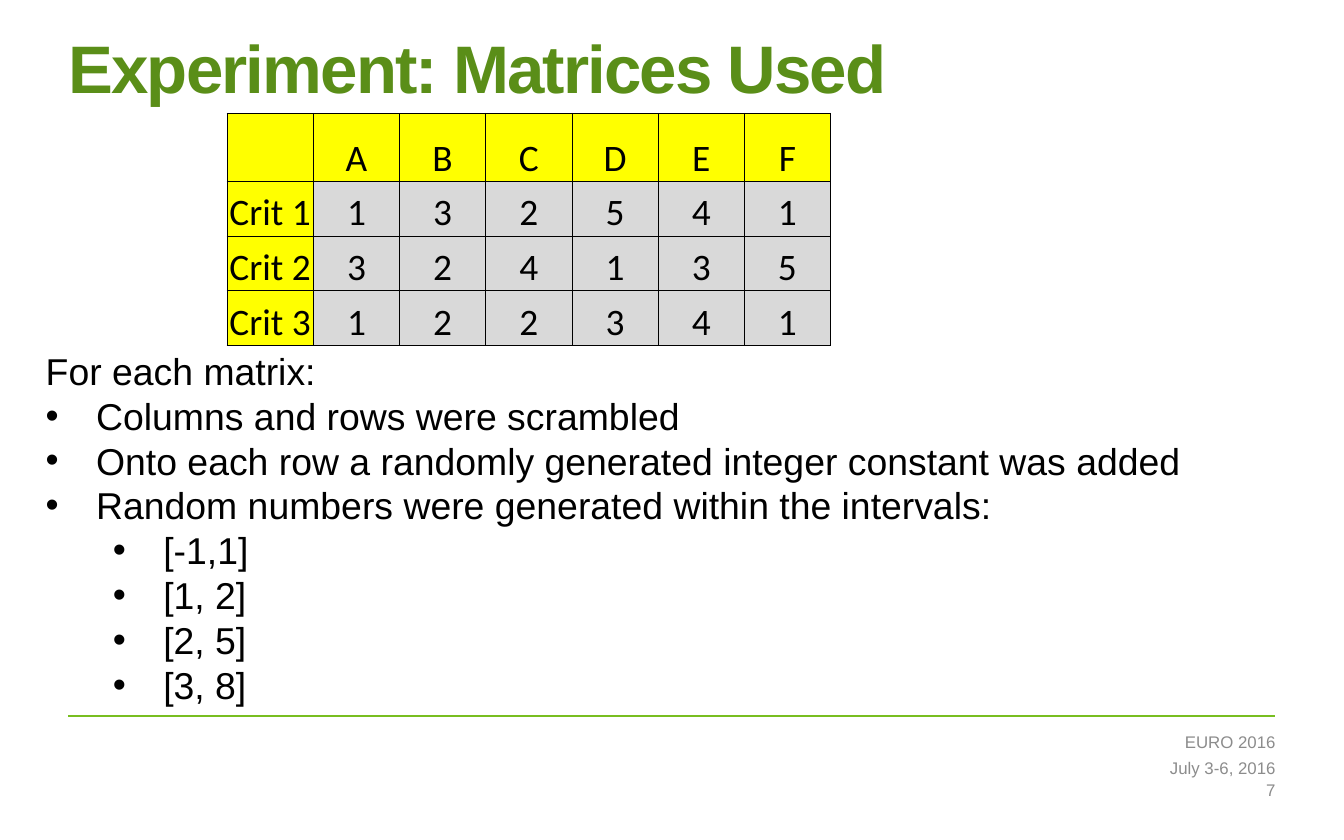
import lxml.etree
import pptx
import pptx.dml.color
import pptx.enum.shapes
import pptx.enum.text
import pptx.oxml
import pptx.oxml.ns
import pptx.util

Pt = pptx.util.Pt
ANCHOR = pptx.enum.text.MSO_ANCHOR
ALIGN = pptx.enum.text.PP_ALIGN
qn = pptx.oxml.ns.qn

MATRIX = [
    ["", "A", "B", "C", "D", "E", "F"],
    ["Crit 1", "1", "3", "2", "5", "4", "1"],
    ["Crit 2", "3", "2", "4", "1", "3", "5"],
    ["Crit 3", "1", "2", "2", "3", "4", "1"],
]
ROW_HEIGHTS = [36.5, 29.3, 29.3, 29.3]
COLUMN_WIDTH = 46.2

# Text and list level; None marks the unbulleted lead-in.
METHOD = [
    ("For each matrix:", None),
    ("Columns and rows were scrambled", 0),
    ("Onto each row a randomly generated integer constant was added", 0),
    ("Random numbers were generated within the intervals:", 0),
    ("[-1,1]", 1),
    ("[1, 2]", 1),
    ("[2, 5]", 1),
    ("[3, 8]", 1),
]
# Text and height of each stacked footer line.
FOOTER = [("EURO 2016", 16), ("July 3-6, 2016", 12), ("7", 11)]

TITLE_FONT = {"name": "Arial", "size": Pt(36), "bold": True}
BODY_FONT = {"name": "Arial", "size": Pt(20)}
TABLE_FONT = {"name": "Calibri", "size": Pt(20)}
FOOTER_FONT = {"name": "Arial", "size": Pt(9)}


def color(value):
    return pptx.dml.color.RGBColor.from_string(value)


def apply(target, values):
    for name, value in values.items():
        setattr(target, name, value)


def format_font(font, values, hex_color):
    apply(font, values)
    font.color.rgb = color(hex_color)


def place(shape, left, top, width, height):
    apply(shape, {"left": Pt(left), "top": Pt(top),
                  "width": Pt(width), "height": Pt(height)})


def format_frame(frame, anchor, left=0, top=0, right=0, bottom=0):
    apply(frame, {
        "word_wrap": True,
        "auto_size": pptx.enum.text.MSO_AUTO_SIZE.NONE,
        "vertical_anchor": anchor,
        "margin_left": Pt(left), "margin_top": Pt(top),
        "margin_right": Pt(right), "margin_bottom": Pt(bottom),
    })


def set_bullet(paragraph, level):
    """Give a hanging bullet, or none when level is None."""
    properties = paragraph._p.get_or_add_pPr()
    hanging = 0 if level is None else Pt(27)
    properties.set("marL", str(hanging + Pt(36) * (level or 0)))
    properties.set("indent", str(-hanging))
    if level is None:
        lxml.etree.SubElement(properties, qn("a:buNone"))
    else:
        lxml.etree.SubElement(properties, qn("a:buFont"), typeface="Arial")
        lxml.etree.SubElement(properties, qn("a:buChar"), char="•")


def set_borders(cell, hex_color, width):
    properties = cell._tc.get_or_add_tcPr()
    for index, side in enumerate(["a:lnL", "a:lnR", "a:lnT", "a:lnB"]):
        line = lxml.etree.Element(qn(side), w=str(Pt(width)))
        fill = lxml.etree.SubElement(line, qn("a:solidFill"))
        lxml.etree.SubElement(fill, qn("a:srgbClr"), val=hex_color)
        properties.insert(index, line)


def add_title(slide):
    title = slide.shapes.title
    place(title, 36.7, 20.9, 646.6, 51)
    format_frame(title.text_frame, ANCHOR.TOP)
    paragraph = title.text_frame.paragraphs[0]
    apply(paragraph, {"alignment": ALIGN.LEFT, "line_spacing": 0.85})
    run = paragraph.add_run()
    run.text = "Experiment: Matrices Used"
    format_font(run.font, TITLE_FONT, "5A8E18")
    run._r.get_or_add_rPr().set("spc", "-100")


def add_method_list(slide):
    body = slide.placeholders[1]
    place(body, 24.5, 186.5, 613.4, 193.7)
    frame = body.text_frame
    format_frame(frame, ANCHOR.TOP)
    frame.text = "\n".join(text for text, level in METHOD)
    for paragraph, (text, level) in zip(frame.paragraphs, METHOD):
        set_bullet(paragraph, level)
        apply(paragraph, {"level": level or 0, "line_spacing": Pt(24),
                          "space_before": Pt(0), "alignment": ALIGN.LEFT})
        format_font(paragraph.font, BODY_FONT, "000000")


def add_matrix(slide):
    columns = len(MATRIX[0])
    table = slide.shapes.add_table(
        len(MATRIX), columns, Pt(121.7), Pt(60.7),
        Pt(COLUMN_WIDTH * columns), Pt(sum(ROW_HEIGHTS))).table
    apply(table, {"first_row": False, "horz_banding": False})
    for column in table.columns:
        column.width = Pt(COLUMN_WIDTH)
    for row_index, values in enumerate(MATRIX):
        table.rows[row_index].height = Pt(ROW_HEIGHTS[row_index])
        for column_index, value in enumerate(values):
            cell = table.cell(row_index, column_index)
            is_header = row_index == 0 or column_index == 0
            apply(cell, {"text": value, "vertical_anchor": ANCHOR.BOTTOM,
                         "margin_left": 0, "margin_top": 0,
                         "margin_right": 0, "margin_bottom": 0})
            cell.fill.solid()
            cell.fill.fore_color.rgb = color("FFFF00" if is_header else "D9D9D9")
            set_borders(cell, "000000", 0.5)
            paragraph = cell.text_frame.paragraphs[0]
            paragraph.alignment = ALIGN.CENTER
            format_font(paragraph.font, TABLE_FONT, "000000")


def add_footer_rule(slide):
    rule = slide.shapes.add_connector(
        pptx.enum.shapes.MSO_CONNECTOR.STRAIGHT,
        Pt(36.7), Pt(383.7), Pt(683.3), Pt(383.7))
    rule.line.color.rgb = color("78BE20")
    rule.line.width = Pt(1)
    lxml.etree.SubElement(rule._element.spPr, qn("a:effectLst"))


def add_footer(slide):
    top = 389.5
    for text, height in FOOTER:
        box = slide.shapes.add_textbox(Pt(398.2), Pt(top), Pt(285.1), Pt(height))
        format_frame(box.text_frame, ANCHOR.MIDDLE, left=7.2, top=3.6, bottom=3.6)
        paragraph = box.text_frame.paragraphs[0]
        apply(paragraph, {"text": text, "alignment": ALIGN.RIGHT})
        format_font(paragraph.font, FOOTER_FONT, "8C8C8C")
        top += height


def main():
    presentation = pptx.Presentation()
    apply(presentation, {"slide_width": Pt(720), "slide_height": Pt(450)})
    slide = presentation.slides.add_slide(presentation.slide_layouts[1])
    add_footer_rule(slide)
    add_matrix(slide)
    add_title(slide)
    add_method_list(slide)
    add_footer(slide)
    presentation.save("out.pptx")


if __name__ == "__main__":
    main()
